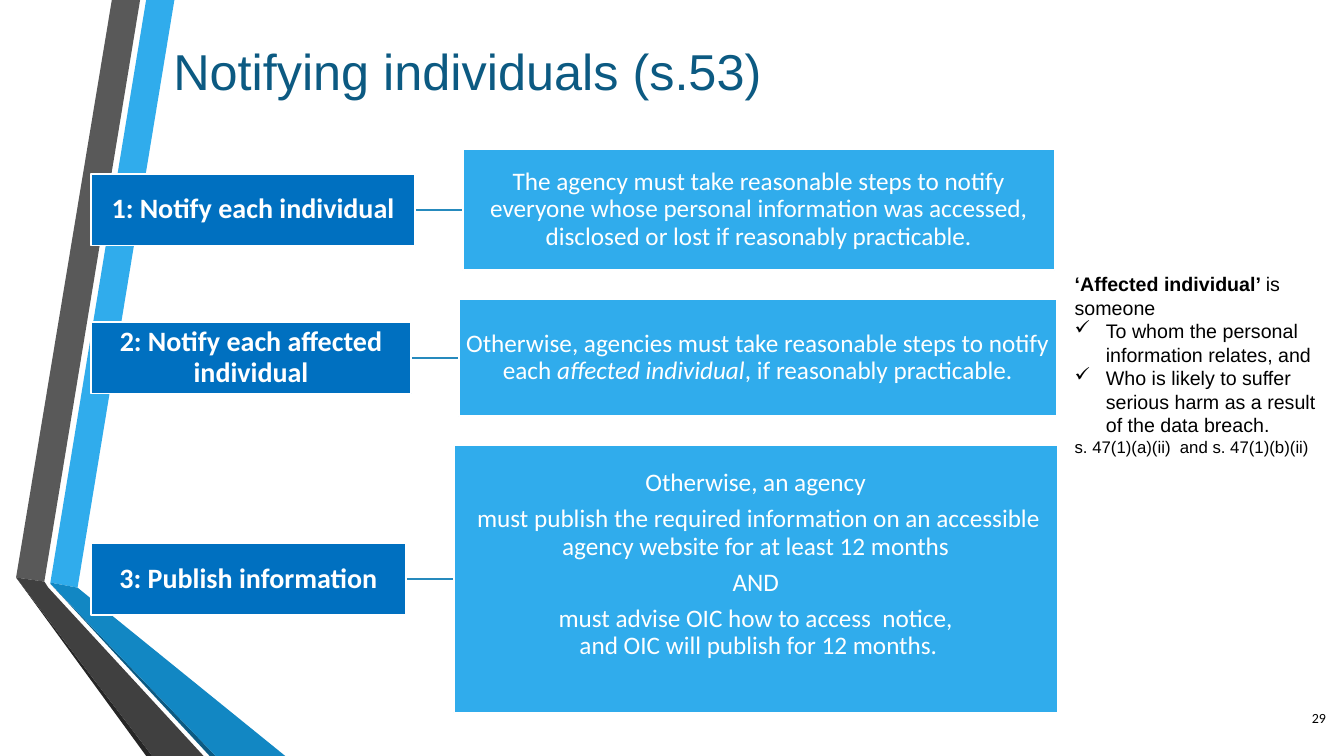
from lxml import etree
from pptx import Presentation
from pptx import util as u
from pptx.dml.color import RGBColor
from pptx.enum import shapes, text
from pptx.oxml import ns

deck = Presentation()
deck.slide_width, deck.slide_height = u.Inches(13.33), u.Inches(7.5)
slide = deck.slides.add_slide(deck.slide_layouts[6])
items = slide.shapes
LEFT, CENTER, RIGHT = text.PP_ALIGN.LEFT, text.PP_ALIGN.CENTER, text.PP_ALIGN.RIGHT
SKY, DEEP, NAVY = "30ACEC", "0070C0", "0C5A82"


def hue(code):
    return RGBColor.from_string(code)


def write(frame, lines, size, font, code, align=LEFT):
    """Fill a frame; a line is a string or a list of (words, style) pairs."""
    frame.word_wrap = True
    for n, line in enumerate(lines):
        para = frame.add_paragraph() if n else frame.paragraphs[0]
        para.alignment = align
        for words, style in [(line, "")] if isinstance(line, str) else line:
            run = para.add_run()
            run.text = words
            run.font.size, run.font.name = u.Pt(size), font
            run.font.color.rgb = hue(code)
            run.font.bold, run.font.italic = style == "b", style == "i"


# Ribbon at the left edge
ribbon = [
    (SKY, [(0.5, 5.78), (0.77, 5.83), (1.73, 0), (1.45, 0)]),
    ("595959", [(1.39, 0), (1.11, 0), (0.16, 5.73), (0.44, 5.77)]),
    ("262626", [(0.16, 5.73), (1.45, 7.5), (1.51, 7.5)]),
    (NAVY, [(0.5, 5.79), (2.08, 7.5), (2.14, 7.5)]),
    ("1287C3", [(0.5, 5.79), (2.14, 7.5), (2.83, 7.5), (0.77, 5.83), (0.5, 5.78)]),
    ("404040", [(2.02, 7.5), (0.48, 5.83), (0.44, 5.77), (0.16, 5.73), (1.51, 7.5)]),
]
for code, dots in ribbon:
    dots = [(u.Inches(x), u.Inches(y)) for x, y in dots]
    pen = items.build_freeform(*dots[0])
    pen.add_line_segments(dots[1:], close=True)
    band = pen.convert_to_shape()
    band.shadow.inherit = False
    band.fill.solid()
    band.fill.fore_color.rgb = hue(code)
    band.line.fill.background()

# Steps: label, label width, box width, box height, bottom inset, box lines
steps = [
    ("1: Notify each individual", 3.22, 5.87, 1.2, 0.01,
     ["The agency must take reasonable steps to notify everyone whose personal "
      "information was accessed, disclosed or lost if reasonably practicable."]),
    ("2: Notify each affected individual", 3.18, 5.93, 1.16, 0.01,
     [[("Otherwise, agencies must take reasonable steps to notify each ", ""),
       ("affected individual", "i"), (", if reasonably practicable.", "")]]),
    ("3: Publish information", 3.13, 5.99, 2.65, 0.29,
     ["Otherwise, an agency",
      " must publish the required information on an accessible agency website "
      "for at least 12 months",
      "AND",
      "must advise OIC how to access  notice,",
      " and OIC will publish for 12 months."]),
]
edge, tall, link, gap = 0.9, 0.71, 0.47, 0.29
top = 1.48
for label, wide, span, high, foot, lines in steps:
    mid = top + high / 2
    start = edge + wide
    wire = items.add_connector(shapes.MSO_CONNECTOR.STRAIGHT, u.Inches(start),
                               u.Inches(mid), u.Inches(start + link), u.Inches(mid))
    wire.line.color.rgb, wire.line.width = hue("268ABD"), u.Pt(1.25)
    etree.SubElement(wire._element.spPr, ns.qn("a:effectLst"))
    parts = [
        (edge, mid - tall / 2, wide, tall, DEEP, 20, 0.01, [[(label, "b")]]),
        (start + link, top, span, high, SKY, 18, foot, lines),
    ]
    for x, y, w, h, code, size, base, words in parts:
        box = items.add_shape(shapes.MSO_SHAPE.RECTANGLE, *map(u.Inches, (x, y, w, h)))
        box.shadow.inherit = False
        box.fill.solid()
        box.fill.fore_color.rgb = hue(code)
        box.line.color.rgb, box.line.width = hue("FFFFFF"), u.Pt(1.25)
        frame = box.text_frame
        frame.margin_left = frame.margin_right = frame.margin_top = u.Inches(0.01)
        frame.margin_bottom = u.Inches(base)
        frame.vertical_anchor = text.MSO_ANCHOR.MIDDLE
        write(frame, words, size, "Calibri", "FFFFFF", CENTER)
        for para in frame.paragraphs:
            para.line_spacing = 0.9
        for para in frame.paragraphs[:3]:
            if len(words) > 1:
                para.space_after = u.Pt(6.3)
    top += high + gap

# Title, side note and page number
notes = [
    (1.62, 0.35, 7.05, 0.71, 36, "Arial", NAVY, LEFT, ["Notifying individuals (s.53)"]),
    (10.56, 2.65, 2.71, 2.46, 14, "Arial", "000000", LEFT,
     [[("‘Affected individual’ ", "b"), ("is someone", "")],
      "To whom the personal information relates, and",
      "Who is likely to suffer serious harm as a result of the data breach.",
      "s. 47(1)(a)(ii)  and s. 47(1)(b)(ii)"]),
    (12.65, 6.92, 0.6, 0.4, 10, "Calibri", "000000", RIGHT, ["29"]),
]
frames = []
for x, y, w, h, size, font, code, align, lines in notes:
    frame = items.add_textbox(*map(u.Inches, (x, y, w, h))).text_frame
    write(frame, lines, size, font, code, align)
    frames.append(frame)
title, aside, page = frames
page.vertical_anchor = text.MSO_ANCHOR.MIDDLE

# Check marks and the smaller reference in the side note
for para in aside.paragraphs[1:3]:
    props = para._p.get_or_add_pPr()
    props.set("marL", str(u.Inches(0.31)))
    props.set("indent", str(-u.Inches(0.31)))
    etree.SubElement(props, ns.qn("a:buChar"), char="✓")
aside.paragraphs[3].runs[0].font.size = u.Pt(12)

deck.save("out.pptx")
